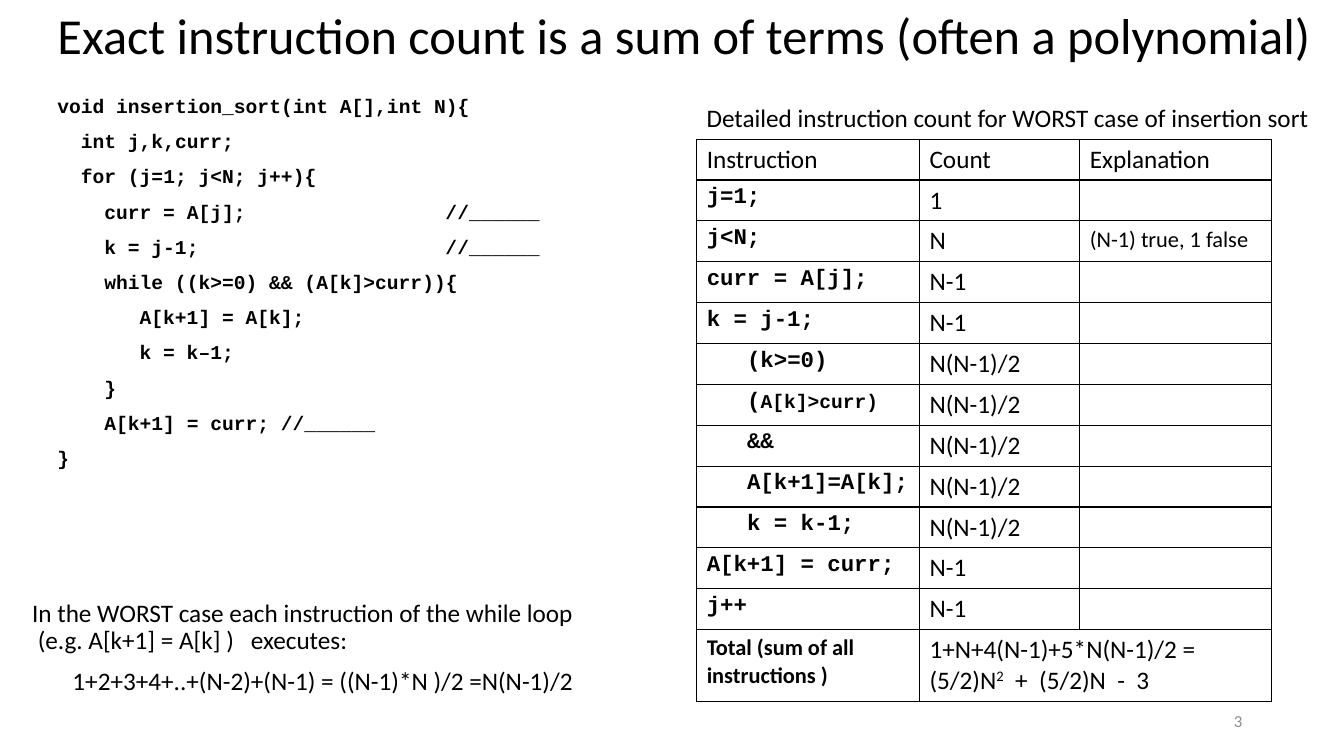
from dataclasses import dataclass
from typing import Optional

from lxml import etree
from pptx import Presentation
from pptx.dml.color import RGBColor
from pptx.enum.text import MSO_ANCHOR, MSO_AUTO_SIZE, PP_ALIGN
from pptx.oxml.ns import qn
from pptx.util import Inches, Pt

LEFT, RIGHT = PP_ALIGN.LEFT, PP_ALIGN.RIGHT
TOP, MIDDLE = MSO_ANCHOR.TOP, MSO_ANCHOR.MIDDLE
NO_AUTOFIT, GROW_SHAPE = MSO_AUTO_SIZE.NONE, MSO_AUTO_SIZE.SHAPE_TO_FIT_TEXT
TITLE_ONLY = 5


@dataclass(frozen=True)
class Theme:
    sans: str = "Calibri"
    mono: str = "Courier New"
    ink: RGBColor = RGBColor(0, 0, 0)
    grey: RGBColor = RGBColor(0x8C, 0x8C, 0x8C)
    paper: RGBColor = RGBColor(255, 255, 255)
    title: int = 36
    body: int = 18
    small: int = 16
    code: int = 14
    number: int = 12
    code_column: float = 14 * 0.6 / 72  # width of one monospaced letter, inches


THEME = Theme()


@dataclass(frozen=True)
class Style:
    size: int
    font: str = THEME.sans
    bold: bool = False
    color: RGBColor = THEME.ink


TITLE = Style(THEME.title)
BODY = Style(THEME.body)
NOTE = Style(THEME.small)
TOTAL = Style(THEME.small, bold=True)
LISTING = Style(THEME.code, THEME.mono, True)
CELL_CODE = Style(THEME.small, THEME.mono, True)
PAGE_NUMBER = Style(THEME.number, color=THEME.grey)


@dataclass(frozen=True)
class Box:
    left: float
    top: float
    width: float
    height: float

    def lengths(self) -> tuple:
        return tuple(Inches(v) for v in (self.left, self.top, self.width, self.height))


@dataclass(frozen=True)
class CodeLine:
    column: int
    code: str
    comment: str = ""


@dataclass(frozen=True)
class CountRow:
    instruction: str
    count: str
    explanation: str = ""
    nested: bool = False
    tail: Optional[str] = None  # rest of the instruction, in smaller type


BLANK = "//______"
COMMENT_COLUMN = 33
CODE = (
    CodeLine(0, "void insertion_sort(int A[],int N){"),
    CodeLine(2, "int j,k,curr;"),
    CodeLine(2, "for (j=1; j<N; j++){"),
    CodeLine(4, "curr = A[j];", BLANK),
    CodeLine(4, "k = j-1;", BLANK),
    CodeLine(4, "while ((k>=0) && (A[k]>curr)){"),
    CodeLine(7, "A[k+1] = A[k];"),
    CodeLine(7, "k = k–1;"),
    CodeLine(4, "}"),
    CodeLine(4, "A[k+1] = curr; " + BLANK),
    CodeLine(0, "}"),
)

HEADINGS = ("Instruction", "Count", "Explanation")
COLUMN_WIDTHS = (2.21, 1.59, 1.9)
LOOP_COUNT = "N(N-1)/2"
COUNTS = (
    CountRow("j=1;", "1"),
    CountRow("j<N;", "N", "(N-1) true, 1 false"),
    CountRow("curr = A[j];", "N-1"),
    CountRow("k = j-1;", "N-1"),
    CountRow("(k>=0)", LOOP_COUNT, nested=True),
    CountRow("(", LOOP_COUNT, nested=True, tail="A[k]>curr)"),
    CountRow("&&", LOOP_COUNT, nested=True),
    CountRow("A[k+1]=A[k];", LOOP_COUNT, nested=True),
    CountRow("k = k-1;", LOOP_COUNT, nested=True),
    CountRow("A[k+1] = curr;", "N-1"),
    CountRow("j++", "N-1"),
)


def add_run(paragraph, text: str, style: Style):
    run = paragraph.add_run()
    run.text = text
    run.font.name, run.font.size, run.font.bold = style.font, Pt(style.size), style.bold
    run.font.color.rgb = style.color
    return run


def add_text_box(slide, box: Box, anchor=TOP, wrap: bool = True, auto_size=NO_AUTOFIT):
    frame = slide.shapes.add_textbox(*box.lengths()).text_frame
    frame.word_wrap, frame.vertical_anchor, frame.auto_size = wrap, anchor, auto_size
    return frame


def body_paragraph(frame, first: bool):
    paragraph = frame.paragraphs[0] if first else frame.add_paragraph()
    paragraph.line_spacing, paragraph.space_before = 0.9, Pt(10)
    return paragraph


def indent(paragraph, inches: float) -> None:
    paragraph._p.get_or_add_pPr().set("marL", str(Inches(inches)))


def set_tab_stops(paragraph, columns: list[int]) -> None:
    tabs = etree.SubElement(paragraph._p.get_or_add_pPr(), qn("a:tabLst"))
    for column in columns:
        position = Inches(column * THEME.code_column)
        etree.SubElement(tabs, qn("a:tab"), pos=str(position), algn="l")


def draw_title(slide) -> None:
    title = slide.shapes.title
    title.left, title.top, title.width, title.height = Box(0.47, 0.02, 12.75, 0.72).lengths()
    frame = title.text_frame
    frame.auto_size, frame.vertical_anchor = NO_AUTOFIT, MIDDLE
    paragraph = frame.paragraphs[0]
    paragraph.alignment, paragraph.line_spacing = LEFT, 0.9
    add_run(paragraph, "Exact instruction count is a sum of terms (often a polynomial)", TITLE)


def draw_code(slide) -> None:
    frame = add_text_box(slide, Box(0.47, 0.91, 5.71, 3.94))
    for index, line in enumerate(CODE):
        paragraph = body_paragraph(frame, index == 0)
        stops = [line.column] if line.column else []
        text = "\t" * len(stops) + line.code
        if line.comment:
            stops.append(COMMENT_COLUMN)
            text += "\t" + line.comment
        if stops:
            set_tab_stops(paragraph, stops)
        add_run(paragraph, text, LISTING)


def draw_worst_case(slide) -> None:
    frame = add_text_box(slide, Box(0.22, 5.91, 5.85, 1.14))
    paragraph = body_paragraph(frame, True)
    add_run(paragraph, "In the WORST case each instruction of the while loop", BODY)
    paragraph.add_line_break()
    add_run(paragraph, " (e.g. A[k+1] = A[k] )   executes:", BODY)
    paragraph = body_paragraph(frame, False)
    indent(paragraph, 0.4)
    add_run(paragraph, "1+2+3+4+..+(N-2)+(N-1) = ((N-1)*N )/2 =N(N-1)/2", BODY)


def format_cell(cell) -> None:
    cell.fill.solid()
    cell.fill.fore_color.rgb = THEME.paper
    properties = cell._tc.get_or_add_tcPr()
    for index, side in enumerate(("a:lnL", "a:lnR", "a:lnT", "a:lnB")):
        line = etree.Element(qn(side), w=str(Pt(1)))
        fill = etree.SubElement(line, qn("a:solidFill"))
        etree.SubElement(fill, qn("a:srgbClr"), val=str(THEME.ink))
        properties.insert(index, line)


def draw_count_table(slide) -> None:
    row_total = len(COUNTS) + 2
    shape = slide.shapes.add_table(row_total, len(HEADINGS), *Box(6.91, 1.38, 5.7, 5.57).lengths())
    table = shape.table
    table.first_row = table.horz_banding = False
    for column, width in zip(table.columns, COLUMN_WIDTHS):
        column.width = Inches(width)
    # The last row takes two lines of text
    for row in table.rows:
        row.height = Inches(4.87 / (row_total - 1))
    table.rows[row_total - 1].height = Inches(0.7)
    for cell in table.iter_cells():
        format_cell(cell)

    # Heading and instruction rows
    for column, heading in enumerate(HEADINGS):
        add_run(table.cell(0, column).text_frame.paragraphs[0], heading, BODY)
    for index, row in enumerate(COUNTS, start=1):
        instruction, count, explanation = (
            table.cell(index, column).text_frame.paragraphs[0] for column in range(3))
        add_run(instruction, row.instruction, CELL_CODE)
        if row.tail:
            add_run(instruction, row.tail, LISTING)
        if row.nested:
            indent(instruction, 0.4)
        add_run(count, row.count, BODY)
        if row.explanation:
            add_run(explanation, row.explanation, NOTE)

    # Total row
    last = row_total - 1
    table.cell(last, 1).merge(table.cell(last, 2))
    add_run(table.cell(last, 0).text_frame.paragraphs[0], "Total (sum of all instructions )", TOTAL)
    total = table.cell(last, 1).text_frame.paragraphs[0]
    add_run(total, "1+N+4(N-1)+5*N(N-1)/2 =", BODY)
    total.add_line_break()
    add_run(total, "(5/2)N", BODY)
    add_run(total, "2", BODY)._r.get_or_add_rPr().set("baseline", "30000")
    add_run(total, "  +  (5/2)N  -  3", BODY)


def main() -> None:
    presentation = Presentation()
    presentation.slide_width, presentation.slide_height = Inches(13.33), Inches(7.5)
    slide = presentation.slides.add_slide(presentation.slide_layouts[TITLE_ONLY])
    draw_title(slide)
    draw_worst_case(slide)
    draw_code(slide)
    # Page number
    number = add_text_box(slide, Box(9.42, 6.95, 3, 0.4), MIDDLE).paragraphs[0]
    number.alignment = RIGHT
    add_run(number, "3", PAGE_NUMBER)
    draw_count_table(slide)
    # Table caption
    caption = add_text_box(slide, Box(6.91, 0.97, 6.24, 0.4), wrap=False, auto_size=GROW_SHAPE)
    add_run(caption.paragraphs[0], "Detailed instruction count for WORST case of insertion sort", BODY)
    presentation.save("out.pptx")


if __name__ == "__main__":
    main()
